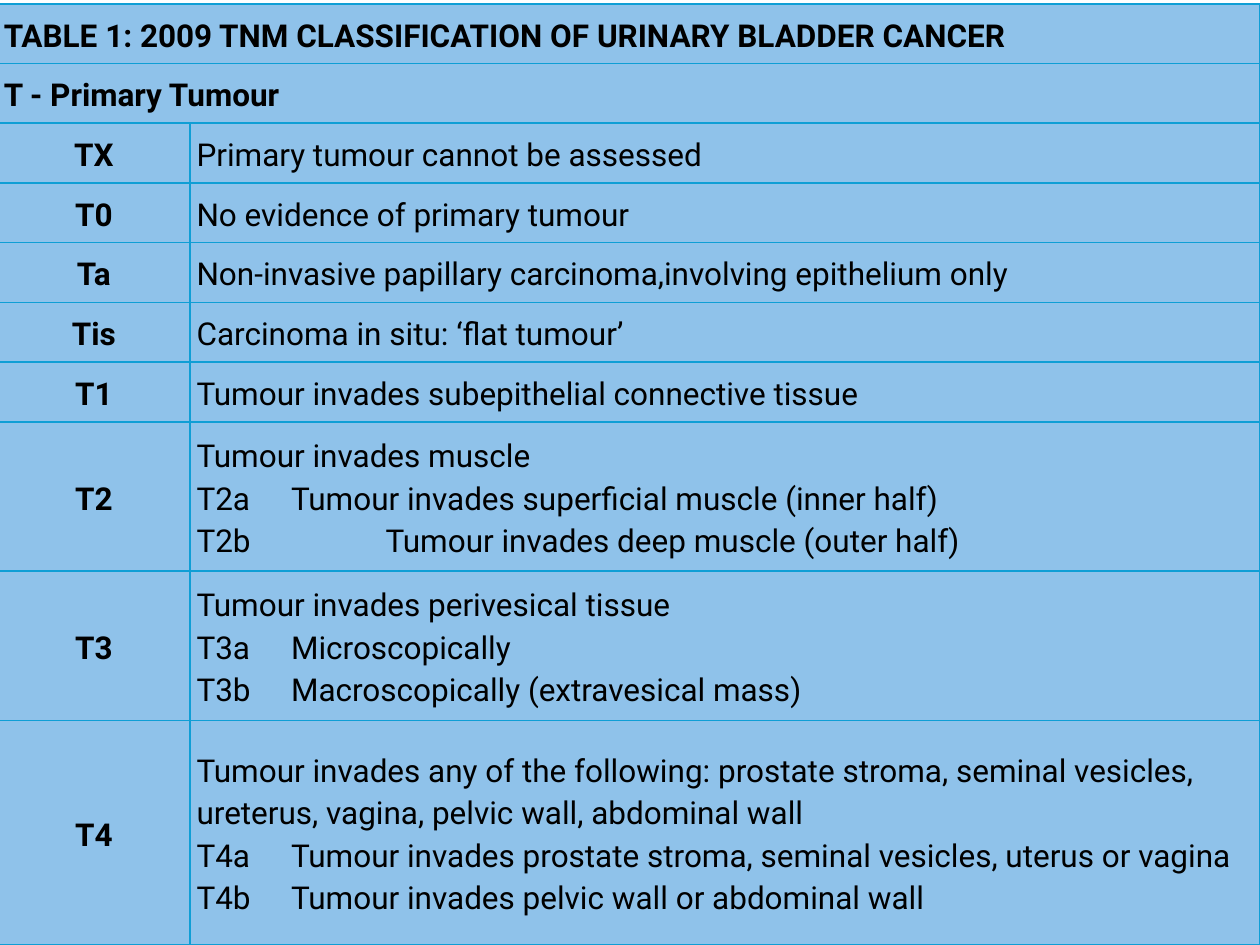
from lxml import etree
from pptx import Presentation
from pptx.dml.color import RGBColor
from pptx.enum import text
from pptx.oxml import ns
from pptx.util import Inches, Pt

FILL = "8FC2EA"
BORDER = "0F9ED5"


def color(hex_string):
    return RGBColor.from_string(hex_string)


def add_child(parent, tag, **attributes):
    return etree.SubElement(parent, ns.qn(tag), attributes)


headings = [
    "TABLE 1: 2009 TNM CLASSIFICATION OF URINARY BLADDER CANCER",
    "T - Primary Tumour",
]
stages = [
    ("TX", ["Primary tumour cannot be assessed"]),
    ("T0", ["No evidence of primary tumour"]),
    ("Ta", ["Non-invasive papillary carcinoma,involving epithelium only"]),
    ("Tis", ["Carcinoma in situ: ‘flat tumour’"]),
    ("T1", ["Tumour invades subepithelial connective tissue"]),
    ("T2", ["Tumour invades muscle",
            "T2a\tTumour invades superficial muscle (inner half)",
            "T2b\t\tTumour invades deep muscle (outer half)"]),
    ("T3", ["Tumour invades perivesical tissue",
            "T3a\tMicroscopically",
            "T3b\tMacroscopically (extravesical mass)"]),
    ("T4", ["Tumour invades any of the following: prostate stroma, seminal vesicles, "
            "ureterus, vagina, pelvic wall, abdominal wall",
            "T4a\tTumour invades prostate stroma, seminal vesicles, uterus or vagina",
            "T4b\tTumour invades pelvic wall or abdominal wall"]),
]
rows = [(heading, []) for heading in headings] + stages
height_shares = [1] * 7 + [2.5, 2.5, 3.75]
table_height = Inches(7.47)

presentation = Presentation()
presentation.slide_width = Inches(10)
presentation.slide_height = Inches(7.5)
slide = presentation.slides.add_slide(presentation.slide_layouts[6])

table = slide.shapes.add_table(
    len(rows), 2, Inches(-0.02), Inches(0.03), Inches(10.02), table_height
).table
table.first_row = False
table.horz_banding = False
table.columns[0].width = Inches(1.53)
table.columns[1].width = Inches(8.49)
for row, share in zip(table.rows, height_shares):
    row.height = int(table_height * share / sum(height_shares))

for row_index, (label, description) in enumerate(rows):
    is_heading = row_index < len(headings)
    if is_heading:
        table.cell(row_index, 0).merge(table.cell(row_index, 1))
    for column_index, lines in enumerate([[label], description]):
        cell = table.cell(row_index, column_index)
        cell.margin_left = cell.margin_right = Inches(0.05)
        cell.margin_top = cell.margin_bottom = 0
        cell.vertical_anchor = text.MSO_ANCHOR.MIDDLE
        properties = cell._tc.get_or_add_tcPr()
        for side in ("a:lnL", "a:lnR", "a:lnT", "a:lnB"):
            line = add_child(properties, side, w=str(Pt(1)))
            add_child(add_child(line, "a:solidFill"), "a:srgbClr", val=BORDER)
        cell.fill.solid()
        cell.fill.fore_color.rgb = color(FILL)
        if not lines:
            continue
        cell.text_frame.text = "\n".join(lines)
        for paragraph in cell.text_frame.paragraphs:
            if "\t" in paragraph.text:
                tabs = add_child(paragraph._p.get_or_add_pPr(), "a:tabLst")
                for position in (0.75, 1.5):
                    add_child(tabs, "a:tab", pos=str(Inches(position)), algn="l")
            paragraph.line_spacing = 1.15
            if column_index == 0 and not is_heading:
                paragraph.alignment = text.PP_ALIGN.CENTER
            paragraph.font.name = "Roboto"
            paragraph.font.size = Pt(18)
            paragraph.font.bold = column_index == 0
            paragraph.font.color.rgb = color("000000")

presentation.save("out.pptx")
